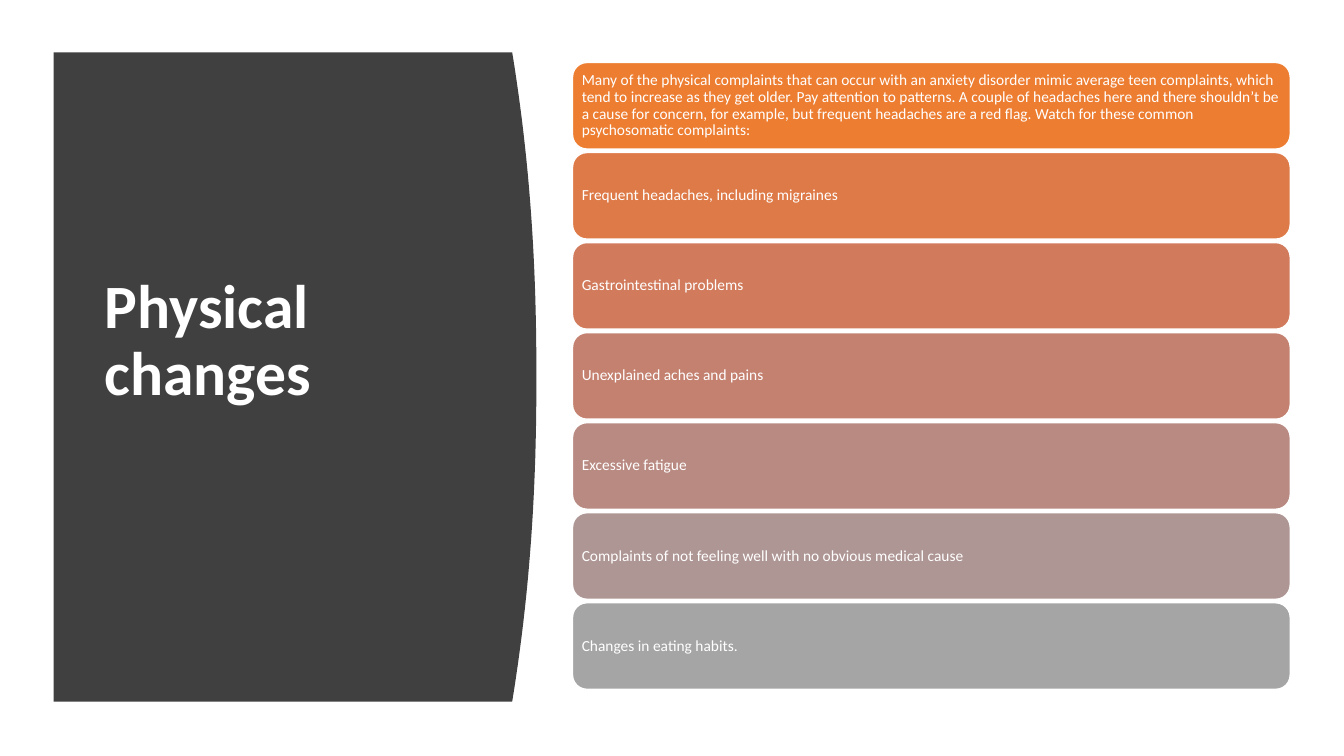
from pptx import Presentation
from pptx.dml.color import RGBColor
from pptx.enum.shapes import MSO_SHAPE
from pptx.enum.text import MSO_ANCHOR, PP_ALIGN
from pptx.util import Inches, Pt

WHITE = RGBColor(0xFF, 0xFF, 0xFF)
CHARCOAL = RGBColor(0x40, 0x40, 0x40)
SYMPTOMS = [
    ("Many of the physical complaints that can occur with an anxiety disorder mimic "
     "average teen complaints, which tend to increase as they get older. Pay attention "
     "to patterns. A couple of headaches here and there shouldn’t be a cause for "
     "concern, for example, but frequent headaches are a red flag. Watch for these "
     "common psychosomatic complaints:", RGBColor(0xED, 0x7D, 0x31)),
    ("Frequent headaches, including migraines", RGBColor(0xDE, 0x7A, 0x47)),
    ("Gastrointestinal problems", RGBColor(0xD1, 0x7B, 0x5C)),
    ("Unexplained aches and pains", RGBColor(0xC4, 0x81, 0x70)),
    ("Excessive fatigue", RGBColor(0xB9, 0x8A, 0x82)),
    ("Complaints of not feeling well with no obvious medical cause",
     RGBColor(0xAE, 0x96, 0x94)),
    ("Changes in eating habits.", RGBColor(0xA5, 0xA5, 0xA5)),
]


class SlideBuilder:
    """Places elements by percentages of the slide's width and height."""

    font_name = "Calibri"
    line_spacing = 0.9

    def __init__(self, presentation):
        self.width = presentation.slide_width
        self.height = presentation.slide_height
        self.slide = presentation.slides.add_slide(presentation.slide_layouts[6])

    def x(self, percent):
        return round(self.width * percent / 100)

    def y(self, percent):
        return round(self.height * percent / 100)

    def box(self, left, top, width, height):
        return self.x(left), self.y(top), self.x(width), self.y(height)

    def set_text(self, shape, text, size, inset, bold=False):
        frame = shape.text_frame
        frame.word_wrap = True
        frame.vertical_anchor = MSO_ANCHOR.MIDDLE
        frame.margin_left = frame.margin_right = Inches(inset)
        frame.margin_top = frame.margin_bottom = Inches(inset)
        frame.text = text
        paragraph = frame.paragraphs[0]
        paragraph.alignment = PP_ALIGN.LEFT
        paragraph.line_spacing = self.line_spacing
        font = paragraph.runs[0].font
        font.name, font.size, font.bold = self.font_name, Pt(size), bold
        font.color.rgb = WHITE

    def curved_panel(self, left, top, right, bottom, bulge, color, steps=48):
        """Draw a panel whose right side swells outwards by bulge."""
        curve = []
        for step in range(steps + 1):
            offset = abs(2 * step / steps - 1)
            curve.append((self.x(right + bulge * (1 - offset ** 2.2)),
                          self.y(top + (bottom - top) * step / steps)))
        builder = self.slide.shapes.build_freeform(self.x(left), self.y(top))
        builder.add_line_segments(curve + [(self.x(left), self.y(bottom))], close=True)
        shape = builder.convert_to_shape()
        shape.shadow.inherit = False
        shape.fill.solid()
        shape.fill.fore_color.rgb = color
        shape.line.fill.background()

    def title(self, text, *box):
        shape = self.slide.shapes.add_textbox(*self.box(*box))
        self.set_text(shape, text, 44, 0.1, bold=True)
        # Raise the centred title by half a line
        shape.text_frame.margin_bottom = Inches(0.77)

    def card(self, text, color, *box):
        shape = self.slide.shapes.add_shape(MSO_SHAPE.ROUNDED_RECTANGLE, *self.box(*box))
        shape.shadow.inherit = False
        shape.fill.solid()
        shape.fill.fore_color.rgb = color
        shape.line.color.rgb = WHITE
        shape.line.width = Pt(1)
        self.set_text(shape, text, 11, 0.05)


def main():
    presentation = Presentation()
    presentation.slide_width = Inches(13.33)
    presentation.slide_height = Inches(7.5)
    builder = SlideBuilder(presentation)

    # Title panel
    builder.curved_panel(3.98, 6.93, 38.11, 92.8, 1.8, CHARCOAL)
    builder.title("Physical changes", 7.05, 14.8, 28.06, 69.87)

    # Stack of symptom cards
    first_top, pitch = 8.27, 11.91
    for row, (text, color) in enumerate(SYMPTOMS):
        builder.card(text, color, 42.6, first_top + row * pitch, 53.4, 11.45)

    presentation.save("out.pptx")


if __name__ == "__main__":
    main()
